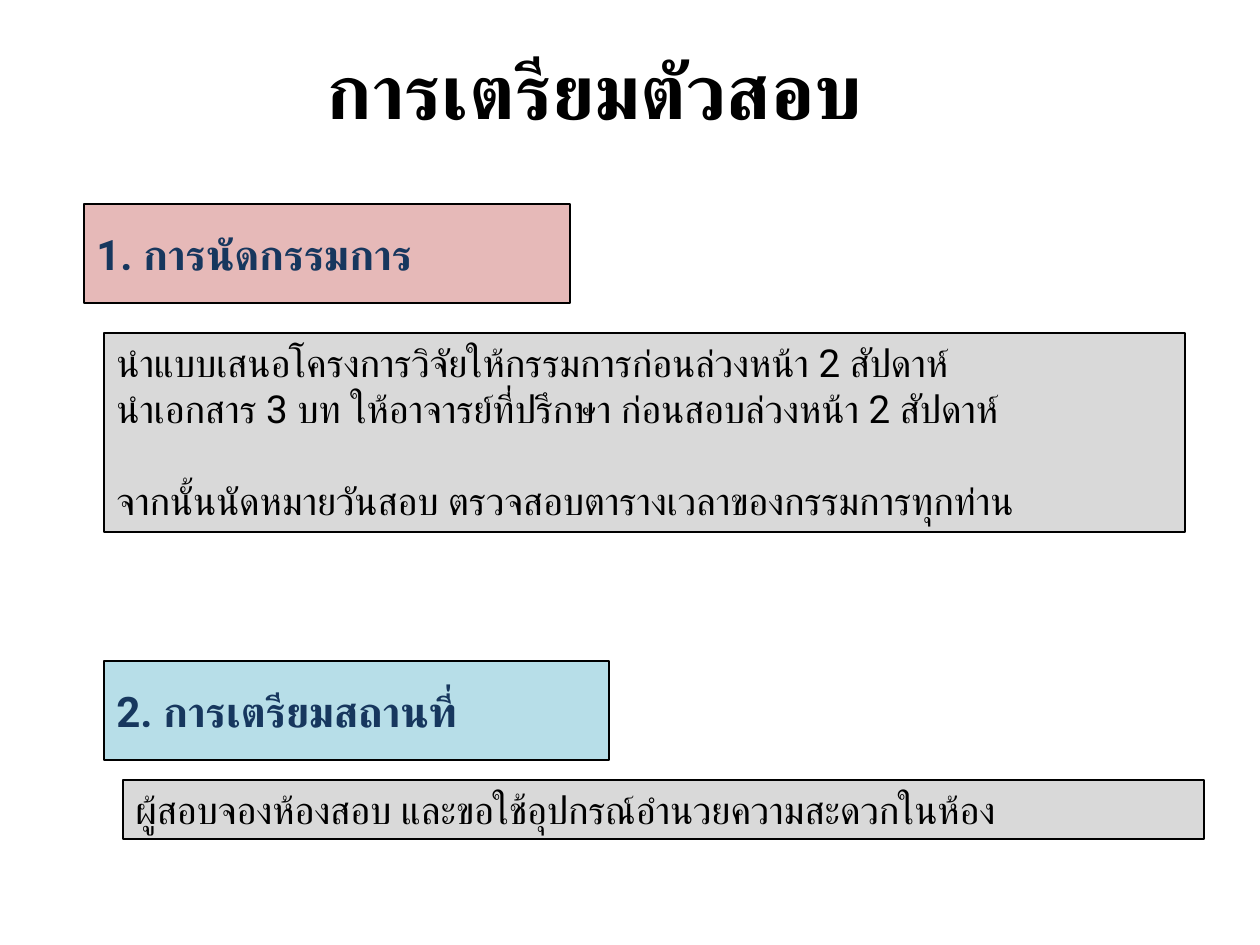
from dataclasses import dataclass
from typing import Optional

from lxml.etree import SubElement
from pptx import Presentation
from pptx.dml.color import RGBColor
from pptx.enum.shapes import MSO_SHAPE as Shape
from pptx.enum.text import MSO_ANCHOR as Anchor, MSO_AUTO_SIZE as AutoSize, PP_ALIGN as Align
from pptx.oxml.ns import qn
from pptx.util import Emu, Pt

PX_PER_INCH = 126
FONT = "Roboto"
BLACK = RGBColor(0x00, 0x00, 0x00)
NAVY = RGBColor(0x17, 0x37, 0x5E)
PINK = RGBColor(0xE6, 0xB9, 0xB8)
BLUE = RGBColor(0xB7, 0xDE, 0xE8)
GRAY = RGBColor(0xD9, 0xD9, 0xD9)


@dataclass(frozen=True)
class Style:
    size: int
    color: RGBColor
    bold: bool
    align: Align
    anchor: Anchor
    grow: bool = False


@dataclass(frozen=True)
class Line:
    text: str
    space_before: int = 0


@dataclass(frozen=True)
class Panel:
    left: int
    top: int
    width: int
    height: int
    style: Style
    lines: tuple[Line, ...]
    fill: Optional[RGBColor] = None


TITLE = Style(44, BLACK, True, Align.CENTER, Anchor.MIDDLE)
HEADING = Style(24, NAVY, True, Align.LEFT, Anchor.MIDDLE)
BODY = Style(22, BLACK, False, Align.LEFT, Anchor.TOP, grow=True)

PANELS = (
    Panel(44, 5, 1101, 168, TITLE, (Line("การเตรียมตัวสอบ"),)),
    Panel(84, 204, 486, 99, HEADING, (Line("1. การนัดกรรมการ"),), PINK),
    Panel(104, 333, 1081, 199, BODY, (
        Line("นำแบบเสนอโครงการวิจัยให้กรรมการก่อนล่วงหน้า 2 สัปดาห์"),
        Line("นำเอกสาร 3 บท ให้อาจารย์ที่ปรึกษา ก่อนสอบล่วงหน้า 2 สัปดาห์"),
        Line("จากนั้นนัดหมายวันสอบ ตรวจสอบตารางเวลาของกรรมการทุกท่าน", space_before=26),
    ), GRAY),
    Panel(123, 780, 1081, 59, BODY, (
        Line("ผู้สอบจองห้องสอบ และขอใช้อุปกรณ์อำนวยความสะดวกในห้อง"),
    ), GRAY),
    Panel(104, 661, 505, 99, HEADING, (Line("2. การเตรียมสถานที่"),), BLUE),
)


def px(length: int) -> Emu:
    return Emu(round(length * 914400 / PX_PER_INCH))


def write_lines(frame, style: Style, lines: tuple[Line, ...]) -> None:
    frame.word_wrap = True
    frame.auto_size = AutoSize.SHAPE_TO_FIT_TEXT if style.grow else AutoSize.NONE
    frame.vertical_anchor = style.anchor
    for index, line in enumerate(lines):
        para = frame.add_paragraph() if index else frame.paragraphs[0]
        para.alignment = style.align
        if line.space_before:
            para.space_before = Pt(line.space_before)
        span = para.add_run()
        span.text = line.text
        font = span.font
        font.name = FONT
        font.size = Pt(style.size)
        font.bold = style.bold
        font.color.rgb = style.color
        # Thai letters take the complex-script font.
        SubElement(span._r.get_or_add_rPr(), qn("a:cs"), typeface=FONT)


def add_panel(page, panel: Panel) -> None:
    bounds = [px(n) for n in (panel.left, panel.top, panel.width, panel.height)]
    if panel.fill is None:
        box = page.shapes.add_textbox(*bounds)
    else:
        box = page.shapes.add_shape(Shape.RECTANGLE, *bounds)
        box.shadow.inherit = False
        box.fill.solid()
        box.fill.fore_color.rgb = panel.fill
        box.line.color.rgb = BLACK
        box.line.width = Pt(0.75)
    write_lines(box.text_frame, panel.style, panel.lines)


def main() -> None:
    deck = Presentation()
    deck.slide_width = px(1260)
    deck.slide_height = px(945)
    page = deck.slides.add_slide(deck.slide_layouts[6])
    for panel in PANELS:
        add_panel(page, panel)
    deck.save("out.pptx")


if __name__ == "__main__":
    main()
